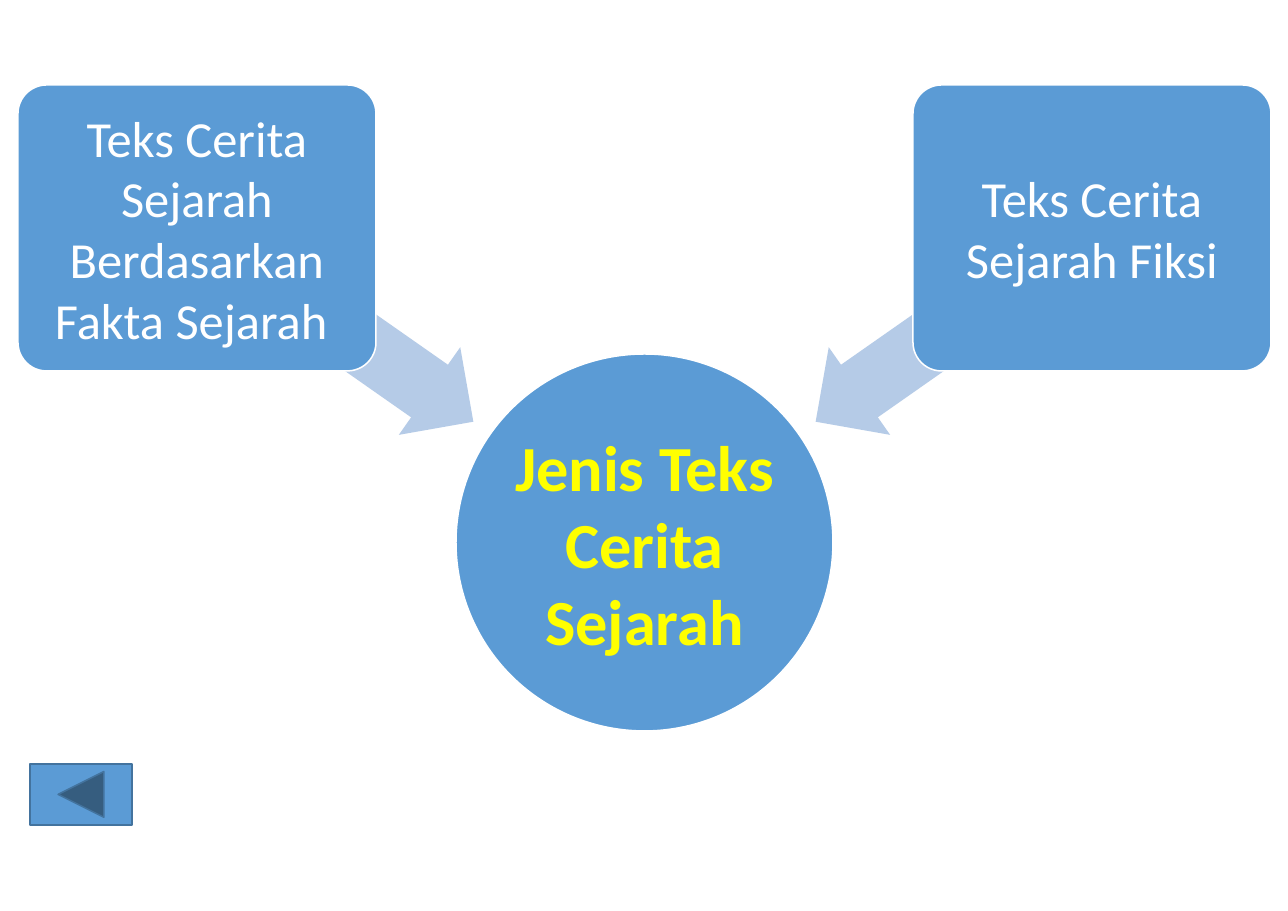
import pptx
import pptx.dml.color
import pptx.enum.shapes
import pptx.enum.text
import pptx.util

SLIDE_SIZE = (1288, 911)
TOPIC = "Jenis Teks Cerita Sejarah"
# Text, arrow rotation, on the right side
KINDS = [
    ("Teks Cerita Sejarah Berdasarkan Fakta Sejarah ", 215, False),
    ("Teks Cerita Sejarah Fiksi", 325, True),
]

# Left, top, width, height in px; the right side mirrors the left one
CIRCLE = (456, 354, 377, 377)
LEFT_BOX = (18, 85, 358, 286)
LEFT_ARROW = (165, 271, 339, 107)
BACK_BUTTON = (30, 764, 102, 61)
MIRROR_WIDTH = 2 * CIRCLE[0] + CIRCLE[2]

BLUE = pptx.dml.color.RGBColor(0x5B, 0x9B, 0xD5)
PALE_BLUE = pptx.dml.color.RGBColor(0xB5, 0xCB, 0xE7)
DARK_BLUE = pptx.dml.color.RGBColor(0x43, 0x73, 0x9E)
YELLOW = pptx.dml.color.RGBColor(0xFF, 0xFF, 0x00)
WHITE = pptx.dml.color.RGBColor(0xFF, 0xFF, 0xFF)

SHAPE = pptx.enum.shapes.MSO_SHAPE


def px(length):
    return pptx.util.Emu(round(length * 914400 / 110.2))


def mirrored(area):
    left, top, width, height = area
    return MIRROR_WIDTH - left - width, top, width, height


def add_filled(slide, preset, area, fill, line=None):
    shape = slide.shapes.add_shape(preset, *map(px, area))
    shape.shadow.inherit = False
    shape.fill.solid()
    shape.fill.fore_color.rgb = fill
    if line is None:
        shape.line.fill.background()
    else:
        shape.line.color.rgb = line
        shape.line.width = pptx.util.Pt(1)
    return shape


def write(shape, text, size, color, inset, bold=False):
    frame = shape.text_frame
    frame.word_wrap = True
    frame.vertical_anchor = pptx.enum.text.MSO_ANCHOR.MIDDLE
    frame.margin_left = frame.margin_right = px(inset)
    frame.margin_top = frame.margin_bottom = px(inset)
    paragraph = frame.paragraphs[0]
    paragraph.text = text
    paragraph.alignment = pptx.enum.text.PP_ALIGN.CENTER
    paragraph.font.name = "Calibri"
    paragraph.font.size = pptx.util.Pt(size)
    paragraph.font.bold = bold
    paragraph.font.color.rgb = color


def main():
    deck = pptx.Presentation()
    deck.slide_width, deck.slide_height = map(px, SLIDE_SIZE)
    slide = deck.slides.add_slide(deck.slide_layouts.get_by_name("Blank"))

    circle = add_filled(slide, SHAPE.OVAL, CIRCLE, BLUE, WHITE)
    write(circle, TOPIC, 42, YELLOW, 3, bold=True)

    for text, rotation, on_right in KINDS:
        arrow_area = mirrored(LEFT_ARROW) if on_right else LEFT_ARROW
        box_area = mirrored(LEFT_BOX) if on_right else LEFT_BOX
        arrow = add_filled(slide, SHAPE.LEFT_ARROW, arrow_area, PALE_BLUE)
        arrow.adjustments[0] = 0.6
        arrow.adjustments[1] = 0.5
        arrow.rotation = rotation
        box = add_filled(slide, SHAPE.ROUNDED_RECTANGLE, box_area, BLUE, WHITE)
        box.adjustments[0] = 0.1
        write(box, text, 33, WHITE, 8)

    add_filled(slide, SHAPE.ACTION_BUTTON_BACK_OR_PREVIOUS, BACK_BUTTON, BLUE, DARK_BLUE)
    deck.save("out.pptx")


if __name__ == "__main__":
    main()
